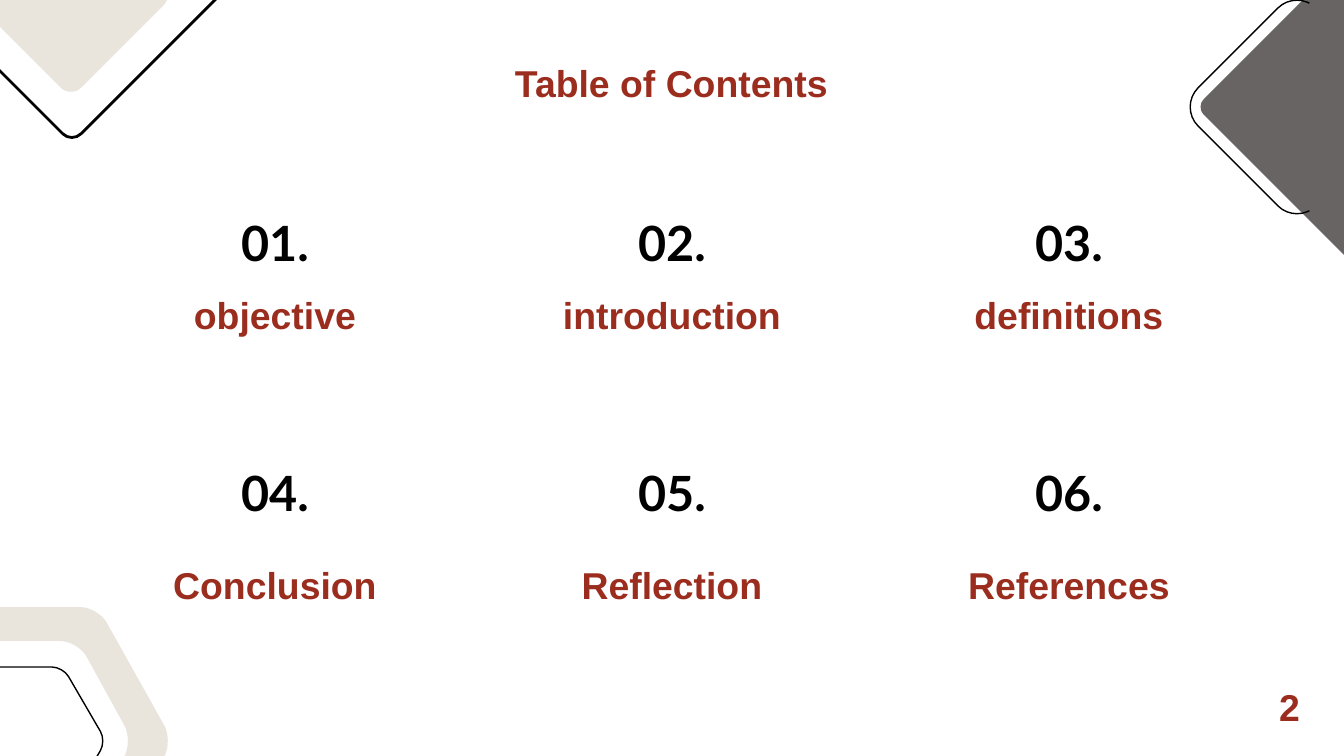
from dataclasses import dataclass

from lxml.etree import Element
from pptx import Presentation
from pptx.dml.color import RGBColor
from pptx.enum.text import MSO_ANCHOR, PP_ALIGN
from pptx.oxml.ns import qn
from pptx.util import Pt

TITLE = "Table of Contents"
TOPICS = [
    ["objective", "introduction", "definitions"],
    ["Conclusion", "Reflection", "References"],
]
PAGE_NUMBER = "2"


@dataclass(frozen=True)
class Theme:
    accent: str = "9B2D1F"
    ink: str = "000000"
    sand: str = "E9E5DC"
    stone: str = "696464"
    heading_font: str = "Arial"
    number_font: str = "Lato"
    heading_size: int = 20
    number_size: int = 26
    heavy_line: float = 1.5
    thin_line: float = 0.75


THEME = Theme()
EMU_PER_INCH = 914400
PX_PER_INCH = 134.4
PAGE_WIDTH, PAGE_HEIGHT = 1344, 756
INSET = 13
ROUNDNESS = 0.55

COLUMN_PITCH = 397
LABEL_WIDTH, LABEL_HEIGHT = 339, 62
NUMBER_WIDTH, NUMBER_HEIGHT = 128, 85
ROWS = [{"number": 200, "label": 284}, {"number": 450, "label": 554}]


def px(length):
    return round(length * EMU_PER_INCH / PX_PER_INCH)


def diamond(x, y, half):
    return [(x, y - half), (x - half, y), (x, y + half), (x + half, y)]


def hexagon(x, y, half_top, half_width, half_height):
    return [
        (x - half_top, y - half_height), (x - half_width, y),
        (x - half_top, y + half_height), (x + half_top, y + half_height),
        (x + half_width, y), (x + half_top, y - half_height),
    ]


def toward(start, end, distance):
    dx, dy = end[0] - start[0], end[1] - start[1]
    share = distance / (dx * dx + dy * dy) ** 0.5
    return start[0] + dx * share, start[1] + dy * share


def rounded(corners, cut):
    points = []
    handle = cut * (1 - ROUNDNESS)
    for index, corner in enumerate(corners):
        before, after = corners[index - 1], corners[(index + 1) % len(corners)]
        points += [
            toward(corner, before, cut), toward(corner, before, handle),
            toward(corner, after, handle), toward(corner, after, cut),
        ]
    return [(px(x), px(y)) for x, y in points]


def bend_corners(shape):
    outline = next(shape.element.iter(qn("a:path")))
    position = 0
    for step in list(outline):
        if step.tag == qn("a:moveTo"):
            position = 0
        elif step.tag == qn("a:lnTo"):
            position += 1
            if position % 4 == 1:
                curve = Element(qn("a:cubicBezTo"))
                step.addprevious(curve)
            if position % 4:
                curve.append(step[0])
                outline.remove(step)


def add_outline(page, contours, fill=None, line_width=None):
    first, *others = contours
    builder = page.shapes.build_freeform(*first[0], scale=1.0)
    builder.add_line_segments(first[1:], close=True)
    for contour in others:
        builder.move_to(*contour[0])
        builder.add_line_segments(contour[1:], close=True)
    shape = builder.convert_to_shape()
    bend_corners(shape)
    shape.shadow.inherit = False
    if fill:
        shape.fill.solid()
        shape.fill.fore_color.rgb = RGBColor.from_string(fill)
    else:
        shape.fill.background()
    if line_width:
        shape.line.color.rgb = RGBColor.from_string(THEME.ink)
        shape.line.width = Pt(line_width)
    else:
        shape.line.fill.background()


def place(box, left, top, width, height):
    box.left, box.top, box.width, box.height = map(px, (left, top, width, height))


def write(box, text, anchor=MSO_ANCHOR.MIDDLE, align=PP_ALIGN.CENTER, inset=INSET,
          font=THEME.heading_font, size=THEME.heading_size, color=THEME.accent):
    frame = box.text_frame
    frame.word_wrap = True
    frame.vertical_anchor = anchor
    frame.margin_left = frame.margin_right = px(INSET)
    frame.margin_top = frame.margin_bottom = px(inset)
    para = frame.paragraphs[0]
    para.alignment = align
    span = para.add_run()
    span.text = text
    span.font.name = font
    span.font.size = Pt(size)
    span.font.bold = True
    span.font.color.rgb = RGBColor.from_string(color)


def add_text(page, text, left, top, width, height, **style):
    box = page.shapes.add_textbox(*map(px, (left, top, width, height)))
    write(box, text, **style)


def add_decoration(page):
    right_triangle = [(1352, -49), (1196, 107), (1352, 263)]
    left_triangle = [(-102, -31), (72, 143), (246, -31)]
    ring = [
        rounded(hexagon(22, 741, 76, 151, 134), 18),
        rounded(hexagon(22, 741, 56, 111, 100)[::-1], 18),
    ]
    add_outline(page, [rounded(right_triangle, 11)], fill=THEME.stone)
    add_outline(page, [rounded(left_triangle, 13)], line_width=THEME.heavy_line)
    add_outline(page, ring, fill=THEME.sand)
    add_outline(page, [rounded(hexagon(22, 741, 41, 84, 74), 11)],
                line_width=THEME.thin_line)
    add_outline(page, [rounded(diamond(71, -5, 103), 15)], fill=THEME.sand)
    add_outline(page, [rounded(diamond(1297, 107, 118), 27)],
                line_width=THEME.thin_line)
    add_outline(page, [rounded(diamond(1322, 107, 118), 27)], fill=THEME.stone)


def add_topics(page):
    for row, (topics, tops) in enumerate(zip(TOPICS, ROWS)):
        for column, topic in enumerate(topics):
            center = PAGE_WIDTH / 2 + (column - 1) * COLUMN_PITCH
            number = row * len(topics) + column + 1
            add_text(page, f"{number:02}.", center - NUMBER_WIDTH / 2, tops["number"],
                     NUMBER_WIDTH, NUMBER_HEIGHT, font=THEME.number_font,
                     size=THEME.number_size, color=THEME.ink)
            add_text(page, topic, center - LABEL_WIDTH / 2, tops["label"],
                     LABEL_WIDTH, LABEL_HEIGHT)


def main():
    deck = Presentation()
    deck.slide_width, deck.slide_height = px(PAGE_WIDTH), px(PAGE_HEIGHT)
    page = deck.slides.add_slide(deck.slide_layouts[5])
    add_decoration(page)
    title = page.shapes.title
    place(title, 433, 47, 477, 85)
    write(title, TITLE, anchor=MSO_ANCHOR.TOP)
    add_topics(page)
    add_text(page, PAGE_NUMBER, 1266, 677, 52, 59, anchor=MSO_ANCHOR.TOP,
             align=PP_ALIGN.LEFT, inset=7)
    deck.save("out.pptx")


if __name__ == "__main__":
    main()
